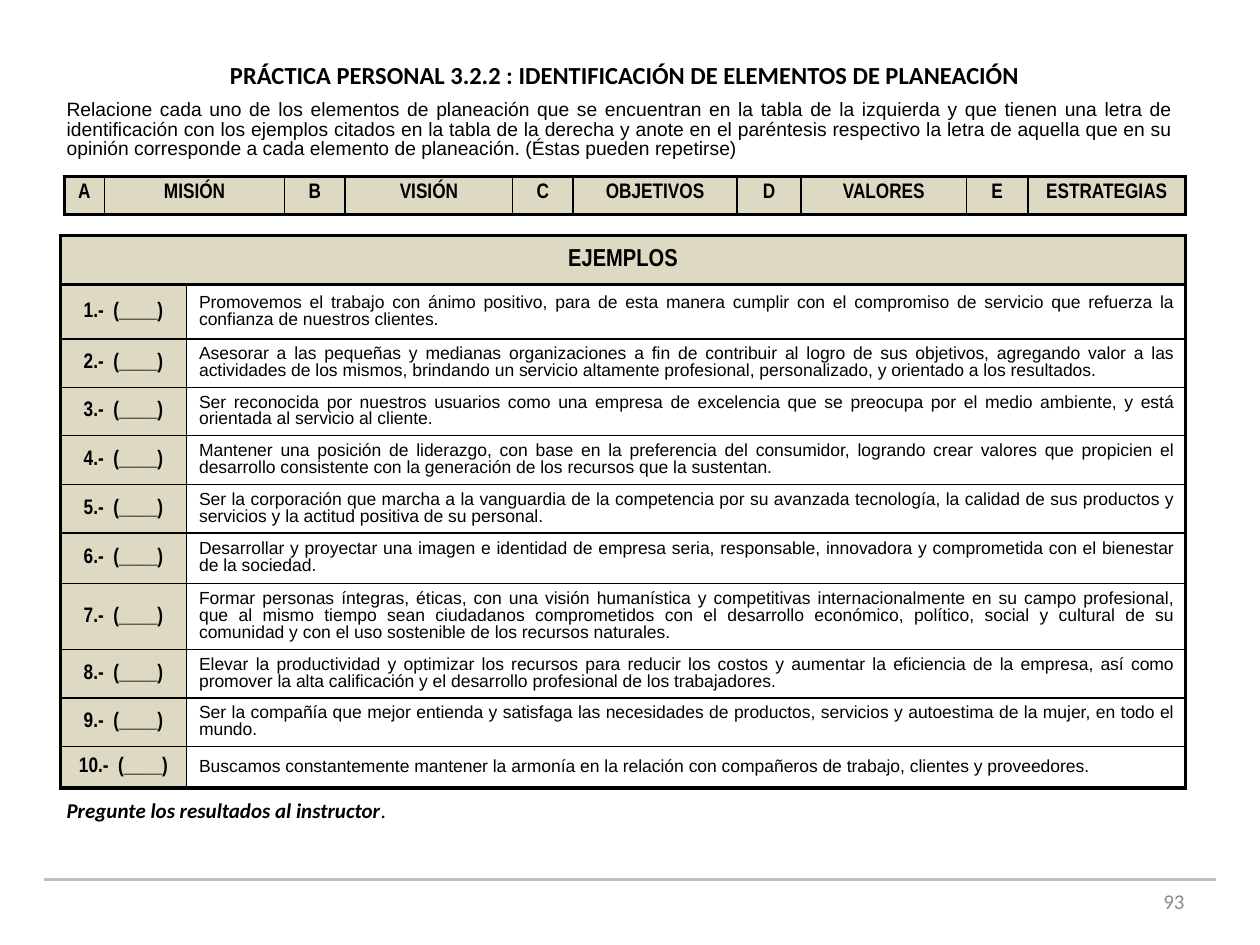
from dataclasses import dataclass

from lxml.etree import SubElement
from pptx import Presentation
from pptx.dml.color import RGBColor
from pptx.enum.shapes import MSO_CONNECTOR
from pptx.enum.text import MSO_ANCHOR, PP_ALIGN
from pptx.oxml import parse_xml
from pptx.oxml.ns import nsdecls, qn
from pptx.util import Inches, Pt


@dataclass(frozen=True)
class Theme:
    """Colours, fonts, type sizes and line widths of the slide."""

    ink: str = "000000"
    paper: str = "FFFFFF"
    sand: str = "DDD9C3"
    rule: str = "BFBFBF"
    muted: str = "8C8C8C"
    body_font: str = "Arial"
    label_font: str = "Arial Narrow"
    heading_font: str = "Calibri"
    heading_size: int = 14
    label_size: int = 12
    intro_size: int = 11
    body_size: int = 10
    thick: float = 2.25
    thin: float = 1


THEME = Theme()

ELEMENTS = ["MISIÓN", "VISIÓN", "OBJETIVOS", "VALORES", "ESTRATEGIAS"]
ELEMENT_WIDTHS = [0.32, 1.43, 0.48, 1.33, 0.48, 1.3, 0.51, 1.31, 0.49, 1.25]
EXAMPLE_WIDTHS = [1, 7.93]
EXAMPLE_HEIGHTS = [0.39, 0.43, 0.36, 0.38, 0.39, 0.36, 0.4, 0.5, 0.37, 0.37, 0.33]
EXAMPLES = [
    "Promovemos el trabajo con ánimo positivo, para de esta manera cumplir con el compromiso de servicio que refuerza la confianza de nuestros clientes.",
    "Asesorar a las pequeñas y medianas organizaciones a fin de contribuir al logro de sus objetivos, agregando valor a las actividades de los mismos, brindando un servicio altamente profesional, personalizado, y orientado a los resultados.",
    "Ser reconocida por nuestros usuarios como una empresa de excelencia que se preocupa por el medio ambiente, y está orientada al servicio al cliente.",
    "Mantener una posición de liderazgo, con base en la preferencia del consumidor, logrando crear valores que propicien el desarrollo consistente con la generación de los recursos que la sustentan.",
    "Ser la corporación que marcha a la vanguardia de la competencia por su avanzada tecnología, la calidad de sus productos y servicios y la actitud positiva de su personal.",
    "Desarrollar y proyectar una imagen e identidad de empresa seria, responsable, innovadora y comprometida con el bienestar de la sociedad.",
    "Formar personas íntegras, éticas, con una visión humanística y competitivas internacionalmente en su campo profesional, que al mismo tiempo sean ciudadanos comprometidos con el desarrollo económico, político, social y cultural de su comunidad y con el uso sostenible de los recursos naturales.",
    "Elevar la productividad y optimizar los recursos para reducir los costos y aumentar la eficiencia de la empresa, así como promover la alta calificación y el desarrollo profesional de los trabajadores.",
    "Ser la compañía que mejor entienda y satisfaga las necesidades de productos, servicios y autoestima de la mujer, en todo el mundo.",
    "Buscamos constantemente mantener la armonía en la relación con compañeros de trabajo, clientes y proveedores.",
]
INTRO = "Relacione cada uno de los elementos de planeación que se encuentran en la tabla de la izquierda y que tienen una letra de identificación con los ejemplos citados en la tabla de la derecha y anote en el paréntesis respectivo la letra de aquella que en su opinión corresponde a cada elemento de planeación. (Éstas pueden repetirse)"


def write(para, text, *, font, size, color=THEME.ink, bold=False, italic=False,
          align=PP_ALIGN.CENTER, spacing=None):
    """Append a formatted run to a paragraph."""
    para.alignment = align
    if spacing:
        para.line_spacing = spacing
    span = para.add_run()
    span.text = text
    span.font.name = font
    span.font.size = Pt(size)
    span.font.bold = bold
    span.font.italic = italic
    span.font.color.rgb = RGBColor.from_string(color)


def add_box(page, left, top, width, height, anchor=MSO_ANCHOR.TOP):
    """Add a wrapping text box and return its first paragraph."""
    box = page.shapes.add_textbox(Inches(left), Inches(top), Inches(width), Inches(height))
    box.text_frame.word_wrap = True
    box.text_frame.vertical_anchor = anchor
    return box.text_frame.paragraphs[0]


def add_grid(page, left, top, widths, heights):
    """Add a table with the given column widths and row heights."""
    frame = page.shapes.add_table(
        len(heights), len(widths), Inches(left), Inches(top),
        Inches(sum(widths)), Inches(sum(heights)))
    for column, width in zip(frame.table.columns, widths):
        column.width = Inches(width)
    for row, height in zip(frame.table.rows, heights):
        row.height = Inches(height)
    return frame.table


def paint(cell, fill, anchor, thick_sides):
    """Fill a cell and draw its borders, thick on the named sides."""
    cell.vertical_anchor = anchor
    cell.fill.solid()
    cell.fill.fore_color.rgb = RGBColor.from_string(fill)
    properties = cell._tc.get_or_add_tcPr()
    for position, side in enumerate("LRTB"):
        width = Pt(THEME.thick if side in thick_sides else THEME.thin)
        properties.insert(position, parse_xml(
            f'<a:ln{side} {nsdecls("a")} w="{width}"><a:solidFill>'
            f'<a:srgbClr val="{THEME.ink}"/></a:solidFill></a:ln{side}>'))


def add_elements(page):
    """Add the row of lettered planning elements."""
    table = add_grid(page, 0.51, 1.4, ELEMENT_WIDTHS, [0.3])
    labels = [label for pair in zip("ABCDE", ELEMENTS) for label in pair]
    for index, label in enumerate(labels):
        cell = table.cell(0, index)
        ends = {0: "L", len(labels) - 1: "R"}
        paint(cell, THEME.sand, MSO_ANCHOR.TOP, "TB" + ends.get(index, ""))
        write(cell.text_frame.paragraphs[0], label, font=THEME.label_font,
              size=THEME.label_size, bold=True)


def add_examples(page):
    """Add the table of numbered examples."""
    table = add_grid(page, 0.48, 1.87, EXAMPLE_WIDTHS, EXAMPLE_HEIGHTS)
    heading = table.cell(0, 0)
    heading.merge(table.cell(0, 1))
    for cell in table.rows[0].cells:
        paint(cell, THEME.sand, MSO_ANCHOR.MIDDLE, "LRTB")
    write(heading.text_frame.paragraphs[0], "EJEMPLOS", font=THEME.label_font,
          size=THEME.heading_size, bold=True)
    edges = {1: "T", len(EXAMPLES): "B"}
    for number, example in enumerate(EXAMPLES, 1):
        answer, statement = table.cell(number, 0), table.cell(number, 1)
        edge = edges.get(number, "")
        paint(answer, THEME.sand, MSO_ANCHOR.MIDDLE, "L" + edge)
        paint(statement, THEME.paper, MSO_ANCHOR.MIDDLE, "R" + edge)
        write(answer.text_frame.paragraphs[0], f"{number}.-  (____)",
              font=THEME.label_font, size=THEME.label_size, bold=True)
        write(statement.text_frame.paragraphs[0], example, font=THEME.body_font,
              size=THEME.body_size, align=PP_ALIGN.JUSTIFY, spacing=0.85)


def add_footer(page):
    """Add the footer rule and the page number."""
    rule = page.shapes.add_connector(
        MSO_CONNECTOR.STRAIGHT, Inches(0.35), Inches(6.98), Inches(9.65), Inches(6.98))
    rule.line.color.rgb = RGBColor.from_string(THEME.rule)
    rule.line.width = Pt(2)
    SubElement(rule._element.spPr, qn("a:effectLst"))
    write(add_box(page, 7.17, 6.95, 2.33, 0.4, MSO_ANCHOR.MIDDLE), "93",
          font=THEME.heading_font, size=THEME.label_size, color=THEME.muted,
          align=PP_ALIGN.RIGHT)


def main():
    """Build the exercise slide and save it."""
    deck = Presentation()
    deck.slide_width, deck.slide_height = Inches(10), Inches(7.5)
    page = deck.slides.add_slide(deck.slide_layouts[6])
    add_footer(page)
    add_examples(page)
    write(add_box(page, 0.51, 0.45, 8.9, 0.31, MSO_ANCHOR.MIDDLE),
          "PRÁCTICA PERSONAL 3.2.2 : IDENTIFICACIÓN DE ELEMENTOS DE PLANEACIÓN",
          font=THEME.heading_font, size=THEME.heading_size, bold=True, spacing=0.9)
    write(add_box(page, 0.43, 0.75, 8.98, 0.57), INTRO, font=THEME.body_font,
          size=THEME.intro_size, align=PP_ALIGN.JUSTIFY, spacing=0.85)
    add_elements(page)
    closing = add_box(page, 0.43, 6.28, 9.45, 0.3)
    for text, strong in (("Pregunte los resultados al instructor", True), (".", False)):
        write(closing, text, font=THEME.heading_font, size=THEME.label_size,
              bold=strong, italic=strong, align=PP_ALIGN.JUSTIFY)
    deck.save("out.pptx")


if __name__ == "__main__":
    main()
